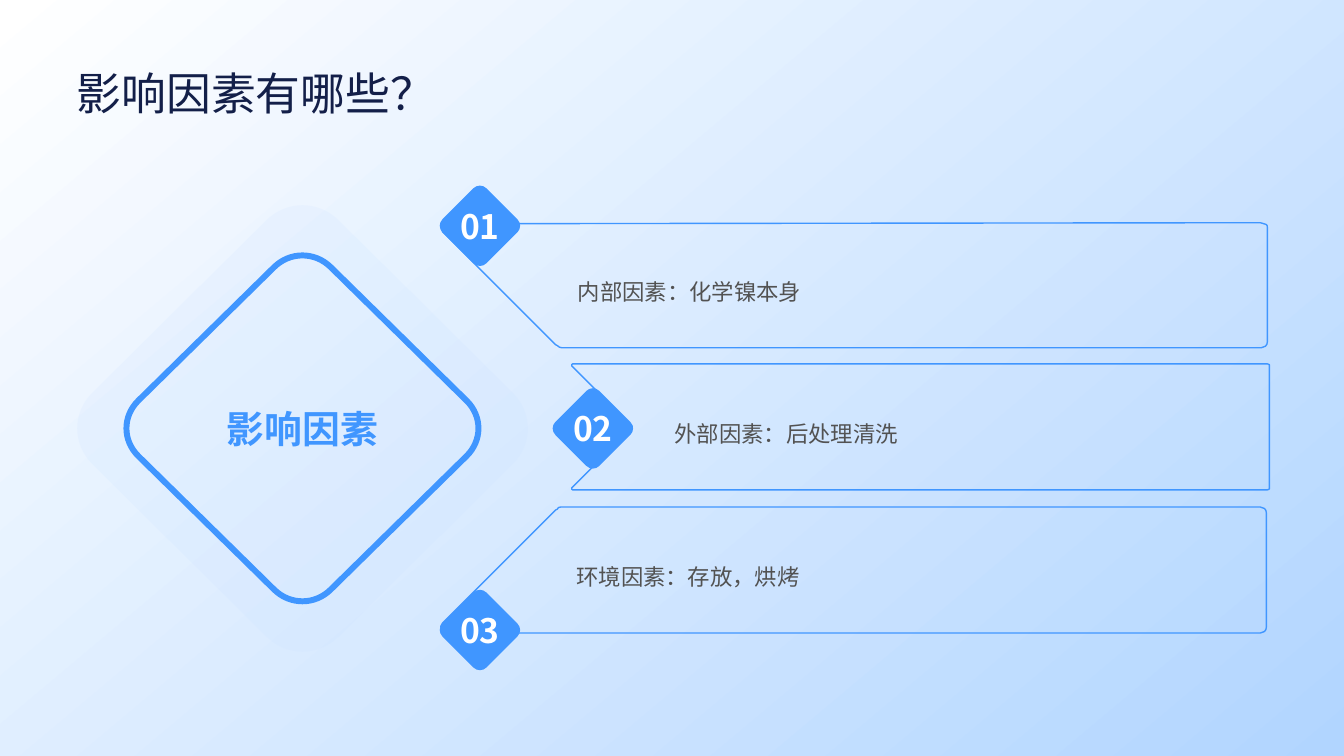
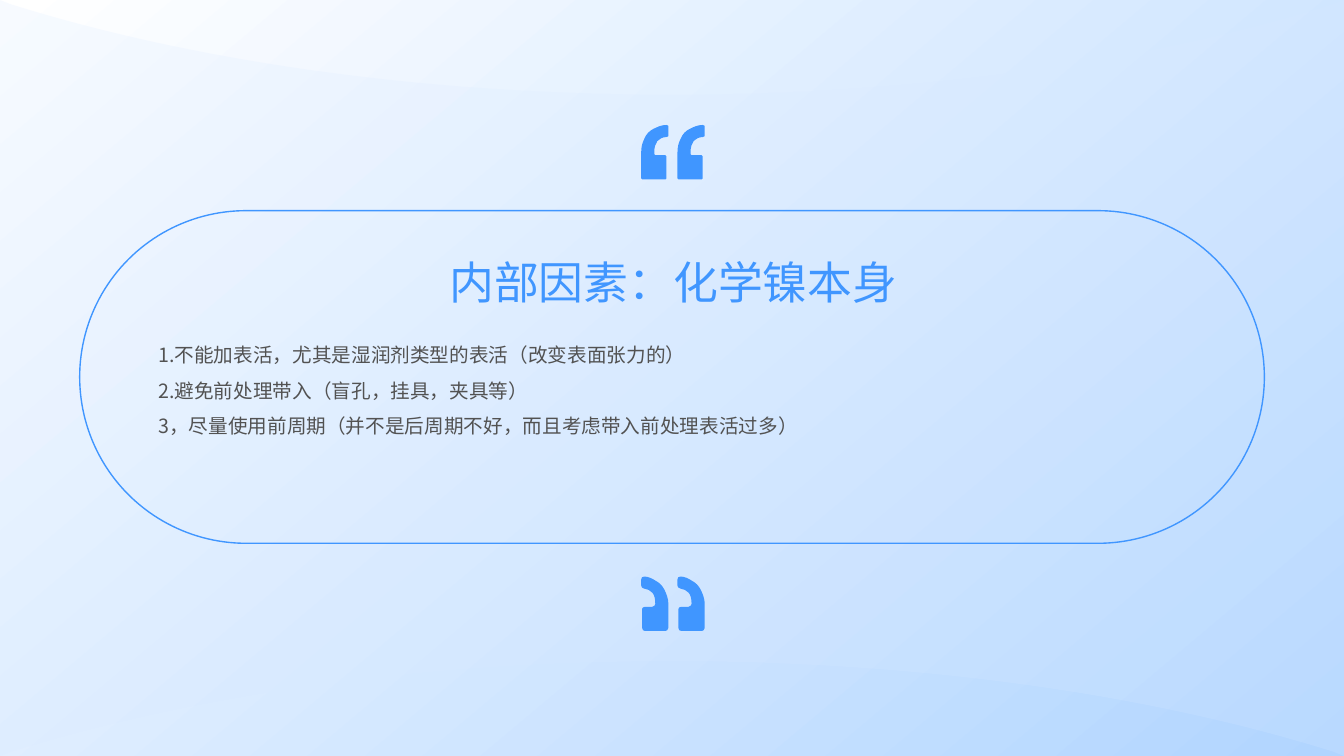
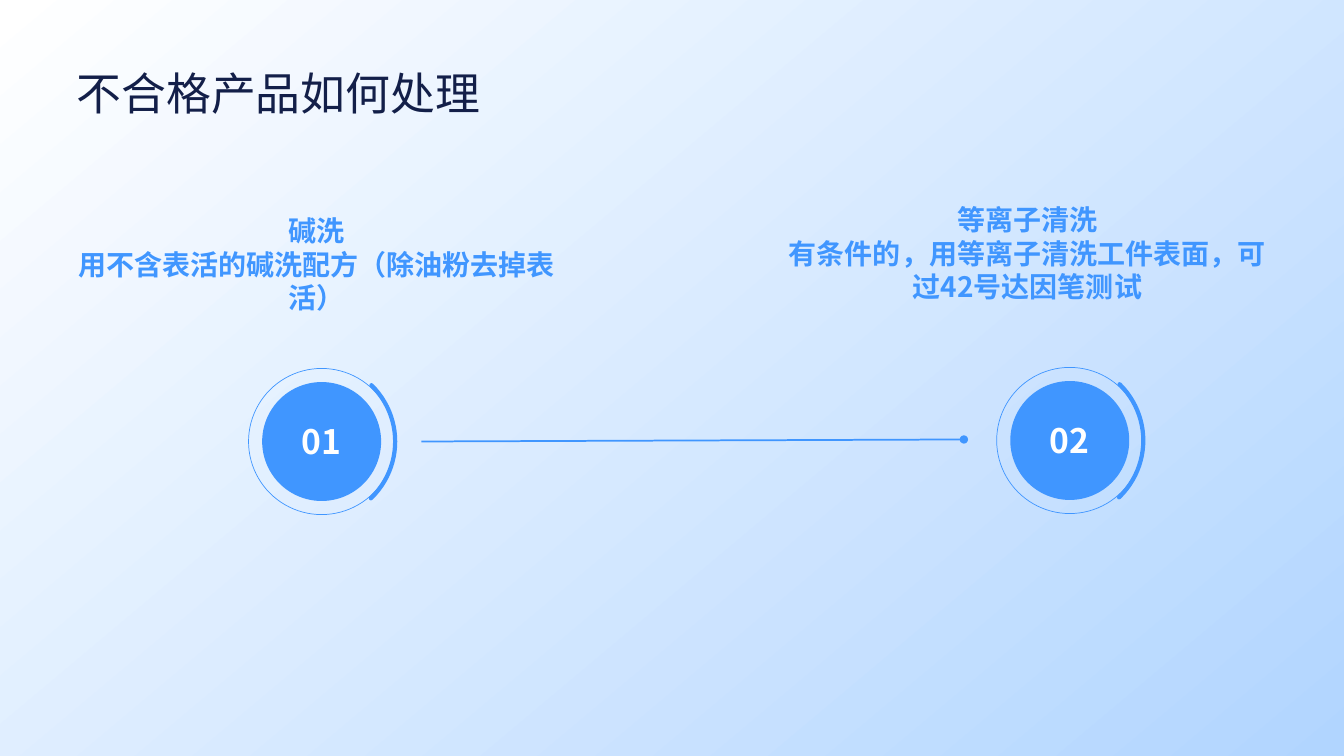
from dataclasses import dataclass
from typing import Callable, Optional

from lxml.etree import SubElement
from pptx import Presentation
from pptx.dml.color import RGBColor
from pptx.enum.shapes import MSO_CONNECTOR, MSO_SHAPE
from pptx.enum.text import MSO_ANCHOR, PP_ALIGN
from pptx.oxml.ns import qn
from pptx.util import Inches, Pt

COLORS = {
    "navy": "131F49", "blue": "4096FF", "grey": "525252", "white": "FFFFFF",
    "sky": "B1D5FF", "halo": "C6DFFF", "veil": "D9EAFF", "base": "E1EFFF",
}
FONT = "Noto Sans CJK SC"
PAGE_SIZE = (13.33, 7.5)
Point = tuple[float, float]
Route = list[list[Point]]  # one point is a straight segment, three are a curve


@dataclass(frozen=True)
class TextStyle:
    size: float
    color: str
    bold: bool = False
    align: PP_ALIGN = PP_ALIGN.LEFT
    anchor: MSO_ANCHOR = MSO_ANCHOR.TOP
    spacing: float = 1.0
    wrap: bool = True


@dataclass(frozen=True)
class Paint:
    fill: Optional[str] = None
    opacity: int = 100
    line: Optional[str] = None
    width: float = 1


@dataclass(frozen=True)
class Panel:
    text: str
    outline: str
    inset: float
    number: str
    badge: Point


@dataclass(frozen=True)
class Step:
    number: str
    center: Point
    lines: tuple[str, ...]
    text_left: float
    text_top: float
    text_height: float


CENTER, MIDDLE = PP_ALIGN.CENTER, MSO_ANCHOR.MIDDLE
TITLE = TextStyle(32, "navy", anchor=MSO_ANCHOR.BOTTOM)
QUOTE_TITLE = TextStyle(32, "blue", align=CENTER, anchor=MIDDLE)
NUMBER = TextStyle(24, "white", True, CENTER, MIDDLE, wrap=False)
HUB = TextStyle(27, "blue", True, CENTER, MIDDLE)
PANEL_TEXT = TextStyle(16, "grey", anchor=MIDDLE, spacing=1.5)
BODY = TextStyle(14, "grey", spacing=1.5)
STEP_TEXT = TextStyle(20, "blue", True, CENTER)
SOLID = Paint(fill="blue")
OUTLINE = Paint(line="blue")


# Shared drawing
def rgb(name: str) -> RGBColor:
    return RGBColor.from_string(COLORS[name])


def paint(shape, look: Paint):
    shape.shadow.inherit = False
    if look.fill:
        shape.fill.solid()
        shape.fill.fore_color.rgb = rgb(look.fill)
        if look.opacity < 100:
            color = shape.element.spPr.find(qn("a:solidFill"))[0]
            SubElement(color, qn("a:alpha"), val=str(look.opacity * 1000))
    else:
        shape.fill.background()
    if look.line:
        shape.line.color.rgb = rgb(look.line)
        shape.line.width = Pt(look.width)
    else:
        shape.line.fill.background()
    return shape


def write(shape, lines: tuple[str, ...], style: TextStyle,
          left: float = 0, right: float = 0) -> None:
    frame = shape.text_frame
    layout = {
        "margin_left": Inches(left), "margin_right": Inches(right),
        "margin_top": 0, "margin_bottom": 0,
        "word_wrap": style.wrap, "vertical_anchor": style.anchor,
    }
    for name, value in layout.items():
        setattr(frame, name, value)
    for index, line in enumerate(lines):
        para = frame.add_paragraph() if index else frame.paragraphs[0]
        para.alignment = style.align
        para.line_spacing = style.spacing
        span = para.add_run()
        span.text = line
        font = {"size": Pt(style.size), "bold": style.bold, "name": FONT}
        for name, value in font.items():
            setattr(span.font, name, value)
        span.font.color.rgb = rgb(style.color)
        SubElement(span.font._element, qn("a:ea"), typeface=FONT)


def add_text(page, left: float, top: float, width: float, height: float,
             lines: tuple[str, ...], style: TextStyle) -> None:
    box = page.shapes.add_textbox(*map(Inches, (left, top, width, height)))
    write(box, lines, style)


def add_title(page, text: str) -> None:
    add_text(page, 0.76, 0.39, 11.81, 0.79, (text,), TITLE)


def add_preset(page, kind: MSO_SHAPE, left: float, top: float,
               width: float, height: float, look: Paint):
    shape = page.shapes.add_shape(kind, *map(Inches, (left, top, width, height)))
    return paint(shape, look)


def add_round(page, kind: MSO_SHAPE, center: Point, size: float, look: Paint):
    left, top = (value - size / 2 for value in center)
    return add_preset(page, kind, left, top, size, size, look)


def parse_route(text: str) -> Route:
    tokens = iter(text.split())
    return [[(float(next(tokens)), float(next(tokens)))
             for _ in range(3 if command == "C" else 1)]
            for command in tokens]


def place(route: Route, move: Callable[[float, float], Point]) -> Route:
    return [[move(x, y) for x, y in segment] for segment in route]


def add_outline(page, contours: list[Route], look: Paint):
    """Trace the contours, then bend each pair of lines through a curve's middle."""
    scaled = [place(route, lambda x, y: (Inches(x), Inches(y))) for route in contours]
    builder = page.shapes.build_freeform(*scaled[0][0][0])
    for index, route in enumerate(scaled):
        if index:
            builder.move_to(*route[0][0])
        vertices, end = [], route[0][0]
        for segment in route[1:]:
            if len(segment) == 3:
                vertices.append(tuple(
                    (a + 3 * b + 3 * c + d) // 8 for a, b, c, d in zip(end, *segment)))
            end = segment[-1]
            vertices.append(end)
        builder.add_line_segments(vertices, close=True)
    shape = builder.convert_to_shape()
    lines = iter(list(shape.element.iter(qn("a:lnTo"))))
    for route in scaled:
        for segment in route[1:]:
            line = next(lines)
            if len(segment) == 1:
                continue
            line.getparent().remove(next(lines))
            line.clear()
            line.tag = qn("a:cubicBezTo")
            for x, y in segment:
                SubElement(line, qn("a:pt"), x=str(x - shape.left), y=str(y - shape.top))
    return paint(shape, look)


# Rounded diamond in units of its half width and half height
DIAMOND = parse_route(
    "M -0.93 0.16 C -1.02 0.07 -1.02 -0.07 -0.93 -0.16 "
    "L -0.16 -0.93 C -0.07 -1.02 0.07 -1.02 0.16 -0.93 "
    "L 0.93 -0.16 C 1.02 -0.07 1.02 0.07 0.93 0.16 "
    "L 0.16 0.93 C 0.07 1.02 -0.07 1.02 -0.16 0.93")


def add_diamond(page, center: Point, half_width: float, half_height: float,
                look: Paint):
    route = place(DIAMOND, lambda x, y: (center[0] + x * half_width,
                                         center[1] + y * half_height))
    return add_outline(page, [route], look)


# Slide 1: factors
HUB_CENTER = (3.0, 4.25)
PANELS = (
    Panel("外部因素：后处理清洗",
          "M 5.68 4.86 L 12.57 4.86 C 12.58 4.86 12.59 4.85 12.59 4.85 L 12.59 3.62 "
          "C 12.59 3.62 12.58 3.61 12.57 3.61 L 5.68 3.61 "
          "C 5.67 3.61 5.67 3.62 5.67 3.63 L 6.27 4.23 "
          "C 6.27 4.23 6.27 4.24 6.27 4.24 L 5.67 4.84 C 5.67 4.85 5.67 4.86 5.68 4.86",
          1.02, "02", (5.88, 4.25)),
    Panel("内部因素：化学镍本身",
          "M 5.57 3.45 C 5.55 3.45 5.54 3.44 5.53 3.43 C 5.52 3.43 5.52 3.42 5.51 3.42 "
          "L 4.39 2.3 C 4.35 2.26 4.51 2.22 4.56 2.22 L 12.5 2.21 "
          "C 12.56 2.23 12.57 2.22 12.57 2.26 L 12.57 3.39 "
          "C 12.57 3.43 12.54 3.45 12.51 3.45",
          1.34, "01", (4.76, 2.24)),
    Panel("环境因素：存放，烘烤",
          "M 5.56 5.03 C 5.54 5.03 5.53 5.04 5.53 5.05 C 5.52 5.05 5.52 5.06 5.51 5.06 "
          "L 4.39 6.18 C 4.35 6.22 4.38 6.28 4.43 6.28 L 12.5 6.28 "
          "C 12.53 6.28 12.56 6.26 12.56 6.22 L 12.56 5.09 "
          "C 12.56 5.05 12.53 5.03 12.5 5.03",
          1.34, "03", (4.76, 6.25)),
)


def build_factors(page) -> None:
    add_diamond(page, HUB_CENTER, 2.24, 2.22, Paint(fill="halo", opacity=15))
    for panel in PANELS:
        shape = add_outline(page, [parse_route(panel.outline)], OUTLINE)
        write(shape, (panel.text,), PANEL_TEXT, left=panel.inset)
    for panel in sorted(PANELS, key=lambda item: item.number):
        badge = add_diamond(page, panel.badge, 0.4, 0.4, SOLID)
        write(badge, (panel.number,), NUMBER)
    hub = add_diamond(page, HUB_CENTER, 1.75, 1.72, Paint(line="blue", width=4.25))
    write(hub, ("影响因素",), HUB, left=0.39, right=0.39)
    add_title(page, "影响因素有哪些？")


# Slide 2: quotation
VEIL = parse_route(
    "M 0 0 L 0.1 0.04 C 1.88 0.6 4.17 0.94 6.67 0.94 "
    "C 9.16 0.94 11.45 0.6 13.23 0.04 L 13.33 0 L 13.33 7.5 L 13.23 7.46 "
    "C 11.45 6.9 9.16 6.56 6.67 6.56 C 4.17 6.56 1.88 6.9 0.1 7.46 L 0 7.5")
OPENING_COMMA = parse_route(
    "M 6.36 1.51 C 6.36 1.46 6.37 1.42 6.39 1.38 C 6.41 1.33 6.44 1.3 6.48 1.28 "
    "C 6.52 1.26 6.56 1.24 6.61 1.24 C 6.62 1.24 6.63 1.25 6.63 1.25 L 6.63 1.35 "
    "C 6.63 1.35 6.62 1.36 6.61 1.36 C 6.57 1.36 6.54 1.38 6.52 1.4 "
    "C 6.5 1.43 6.49 1.46 6.49 1.51 L 6.49 1.53 C 6.49 1.53 6.49 1.54 6.5 1.54 "
    "L 6.6 1.54 C 6.61 1.54 6.61 1.55 6.61 1.55 L 6.61 1.77 "
    "C 6.61 1.78 6.61 1.78 6.6 1.78 L 6.37 1.78 C 6.37 1.78 6.36 1.78 6.36 1.77")
CLOSING_COMMA = parse_route(
    "M 6.36 5.81 C 6.36 5.82 6.37 5.84 6.39 5.84 C 6.42 5.84 6.45 5.86 6.47 5.88 "
    "C 6.49 5.9 6.5 5.94 6.5 5.99 C 6.5 6 6.49 6.02 6.47 6.02 L 6.4 6.02 "
    "C 6.38 6.02 6.37 6.03 6.37 6.04 L 6.37 6.23 C 6.37 6.25 6.38 6.26 6.4 6.26 "
    "L 6.6 6.26 C 6.61 6.26 6.63 6.25 6.63 6.23 L 6.63 5.99 "
    "C 6.63 5.94 6.61 5.89 6.59 5.85 C 6.57 5.81 6.54 5.78 6.5 5.76 "
    "C 6.47 5.74 6.43 5.72 6.39 5.72 C 6.37 5.72 6.36 5.73 6.36 5.75")
COMMA_PITCH = 0.36


def build_quotation(page) -> None:
    add_outline(page, [VEIL], Paint(fill="veil", opacity=20))
    for comma in (OPENING_COMMA, CLOSING_COMMA):
        second = place(comma, lambda x, y: (x + COMMA_PITCH, y))
        add_outline(page, [comma, second], SOLID)
    capsule = add_preset(page, MSO_SHAPE.ROUNDED_RECTANGLE, 0.79, 2.09, 11.75, 3.3, OUTLINE)
    capsule.adjustments[0] = 0.5
    add_text(page, 1.57, 2.36, 10.22, 0.87, ("内部因素：化学镍本身",), QUOTE_TITLE)
    add_text(page, 1.57, 3.29, 10.22, 1.57, (
        "1.不能加表活，尤其是湿润剂类型的表活（改变表面张力的）",
        "2.避免前处理带入（盲孔，挂具，夹具等）",
        "3，尽量使用前周期（并不是后周期不好，而且考虑带入前处理表活过多）",
    ), BODY)


# Slide 3: treatment steps
STEPS = (
    Step("02", (10.61, 4.37),
         ("等离子清洗", "有条件的，用等离子清洗工件表面，可过42号达因笔测试"),
         7.82, 2.01, 1.43),
    Step("01", (3.19, 4.38),
         ("碱洗", "用不含表活的碱洗配方（除油粉去掉表活）"),
         0.77, 2.12, 1.58),
)


def add_step(page, step: Step) -> None:
    add_round(page, MSO_SHAPE.OVAL, step.center, 1.45, Paint(line="blue", width=0.5))
    disc = add_round(page, MSO_SHAPE.OVAL, step.center, 1.18, SOLID)
    write(disc, (step.number,), NUMBER)
    arc_center = (step.center[0] - 0.05, step.center[1])
    arc = add_round(page, MSO_SHAPE.ARC, arc_center, 1.56, Paint(line="blue", width=3))
    arc.rotation = 270
    arc.adjustments[0], arc.adjustments[1] = 26.57, 81.76
    arc.element.spPr.find(qn("a:ln")).set("cap", "rnd")


def build_steps(page) -> None:
    add_title(page, "不合格产品如何处理")
    for step in STEPS:
        add_step(page, step)
    link = page.shapes.add_connector(
        MSO_CONNECTOR.STRAIGHT, *map(Inches, (4.18, 4.38, 9.56, 4.36)))
    link.line.color.rgb = rgb("blue")
    link.line.width = Pt(1.25)
    properties = link.element.spPr
    SubElement(properties.find(qn("a:ln")), qn("a:tailEnd"), type="oval")
    SubElement(properties, qn("a:effectLst"))
    for step in reversed(STEPS):
        add_text(page, step.text_left, step.text_top, 4.74, step.text_height,
                 step.lines, STEP_TEXT)


# Shared backdrop, kept on the slide master
def add_backdrop(deck, page) -> None:
    master = deck.slide_master
    master.background.fill.solid()
    master.background.fill.fore_color.rgb = rgb("base")
    backdrop = add_preset(page, MSO_SHAPE.RECTANGLE, 0, 0, *PAGE_SIZE, Paint())
    backdrop.fill.gradient()
    backdrop.fill.gradient_angle = 310
    for stop, name in zip(backdrop.fill.gradient_stops, ("white", "sky")):
        stop.color.rgb = rgb(name)
    backdrop.element.nvSpPr.cNvPr.set("id", "100")
    master.element.cSld.spTree.insert(2, backdrop.element)


def main() -> None:
    deck = Presentation()
    deck.slide_width, deck.slide_height = map(Inches, PAGE_SIZE)
    builders = (build_factors, build_quotation, build_steps)
    pages = [deck.slides.add_slide(deck.slide_layouts[6]) for _ in builders]
    add_backdrop(deck, pages[0])
    for build, page in zip(builders, pages):
        build(page)
    deck.save("out.pptx")


if __name__ == "__main__":
    main()
